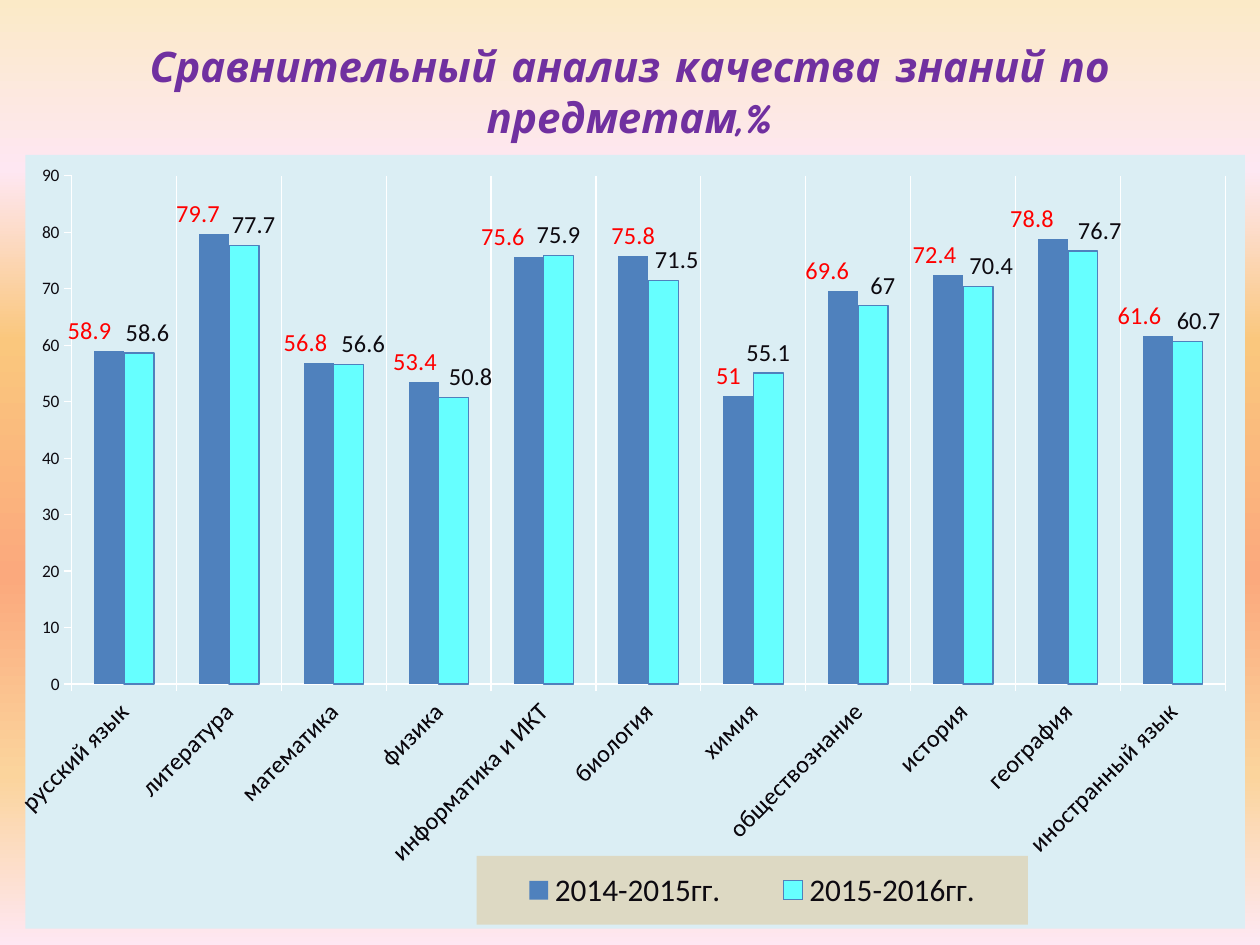
from lxml.etree import SubElement
from pptx import Presentation
from pptx.chart.data import CategoryChartData
from pptx.dml.color import RGBColor
from pptx.enum.chart import (XL_CHART_TYPE, XL_LABEL_POSITION,
                             XL_LEGEND_POSITION, XL_TICK_MARK)
from pptx.enum.text import MSO_ANCHOR, PP_ALIGN
from pptx.oxml import parse_xml
from pptx.oxml.ns import nsdecls, qn
from pptx.util import Inches, Pt

INK, RED, WHITE, BLUE = "0D0A10", "FF0000", "FFFFFF", "4F81BD"
STOPS = [(0, "FBEAC7"), (18, "FEE7F2"), (36, "FAC77D"),
         (61, "FBA97D"), (82, "FBD49C"), (100, "FEE7F2")]
CATS = ["русский язык", "литература", "математика", "физика",
        "информатика и ИКТ", "биология", "химия", "обществознание",
        "история", "география", "иностранный язык"]
# name, fill, label colour, values, label shifts in percent of chart width
SERIES = [
    ("2014-2015гг.", BLUE, RED,
     [58.9, 79.7, 56.8, 53.4, 75.6, 75.8, 51, 69.6, 72.4, 78.8, 61.6],
     [-1.6, -1.3, -1.1, -0.7, -2.1, 0, -0.8, -1.3, -1.1, -1.7, -1.5]),
    ("2015-2016гг.", "66FFFF", INK,
     [58.6, 77.7, 56.6, 50.8, 75.9, 71.5, 55.1, 67, 70.4, 76.7, 60.7],
     [0.7, 0.8, 1.2, 1.4, 0, 1.1, 0, 0.8, 1.1, 1.4, 0.9]),
]


def rgb(code):
    return RGBColor.from_string(code)


def style(font, size, color, name="Calibri", bold=False, italic=False):
    font.size, font.name = Pt(size), name
    font.bold, font.italic = bold, italic
    font.color.rgb = rgb(color)


def put_text(slide, box, text, **form):
    shape = slide.shapes.add_textbox(*map(Inches, box))
    frame = shape.text_frame
    frame.word_wrap = True
    frame.vertical_anchor = MSO_ANCHOR.MIDDLE
    para = frame.paragraphs[0]
    para.alignment = PP_ALIGN.CENTER
    run = para.add_run()
    run.text = text
    style(run.font, **form)


def backdrop(slide):
    slide.background.fill.gradient()
    grad = slide.element.xpath(".//p:bgPr/a:gradFill")[0]
    for child in list(grad):
        grad.remove(child)
    stops = SubElement(grad, qn("a:gsLst"))
    for share, code in STOPS:
        stop = SubElement(stops, qn("a:gs"), pos=str(share * 1000))
        SubElement(stop, qn("a:srgbClr"), val=code)
    SubElement(grad, qn("a:lin"), ang="5400000", scaled="0")


def layout(parent, index, **parts):
    """Give a chart part a manual layout, as the child at index."""
    for old in parent.findall(qn("c:layout")):
        parent.remove(old)
    node = parse_xml(f"<c:layout {nsdecls('c')}><c:manualLayout/></c:layout>")
    for tag, value in parts.items():
        SubElement(node[0], qn("c:" + tag), val=str(value))
    parent.insert(index, node)


def solid(parent, after, code):
    """Add a plain fill to a chart part, behind the given child."""
    parent.find(qn(after)).addnext(parse_xml(
        f"<c:spPr {nsdecls('c', 'a')}><a:solidFill><a:srgbClr val='{code}'/>"
        "</a:solidFill><a:ln><a:noFill/></a:ln></c:spPr>"))


def bars(chart):
    plot = chart.plots[0]
    plot.gap_width, plot.overlap = 150, 0
    plot.vary_by_categories = False
    for series, (_, fill, ink, _, shifts) in zip(plot.series, SERIES):
        series.format.fill.solid()
        series.format.fill.fore_color.rgb = rgb(fill)
        if fill != BLUE:
            series.format.line.color.rgb = rgb(BLUE)
            series.format.line.width = Pt(0.75)
        labels = series.data_labels
        labels.show_value = True
        labels.position = XL_LABEL_POSITION.OUTSIDE_END
        style(labels.font, 14, ink)
        for i, shift in enumerate(shifts):
            if shift:
                label = series.points[i].data_label
                style(label.font, 14, ink)
                label.position = XL_LABEL_POSITION.OUTSIDE_END
                node = chart.element.xpath(
                    f".//c:ser[c:tx//c:v='{series.name}']"
                    f"/c:dLbls/c:dLbl[c:idx/@val='{i}']")[0]
                layout(node, 1, x=round(shift / 100, 3), y=0)


def axes(chart):
    cat, val = chart.category_axis, chart.value_axis
    for axis, size in ((cat, 14), (val, 10)):
        axis.major_tick_mark = XL_TICK_MARK.OUTSIDE
        axis.format.line.color.rgb = rgb(WHITE)
        style(axis.tick_labels.font, size, INK)
    cat.has_major_gridlines = True
    cat.major_gridlines.format.line.color.rgb = rgb(WHITE)
    val.has_major_gridlines = False
    val.minimum_scale, val.maximum_scale, val.major_unit = 0, 90, 10
    body = chart.element.xpath(".//c:catAx/c:txPr/a:bodyPr")[0]
    body.set("rot", "-2700000")
    body.set("vert", "horz")


def key(chart):
    """Place the legend at the foot of the chart."""
    chart.has_legend = True
    chart.legend.position = XL_LEGEND_POSITION.RIGHT
    chart.legend.include_in_layout = False
    style(chart.legend.font, 18, INK)
    node = chart.element.xpath(".//c:legend")[0]
    layout(node, 1, xMode="edge", yMode="edge", x=0.37, y=0.906, w=0.452, h=0.089)
    solid(node, "c:overlay", "DDD9C3")


def put_chart(slide, box):
    data = CategoryChartData()
    data.categories = CATS
    for name, _, _, values, _ in SERIES:
        data.add_series(name, values)
    chart = slide.shapes.add_chart(
        XL_CHART_TYPE.COLUMN_CLUSTERED, *map(Inches, box), data).chart
    chart.has_title = False
    style(chart.font, 10, WHITE)
    bars(chart)
    axes(chart)
    key(chart)
    solid(chart.element, "c:chart", "DBEEF4")
    layout(chart.element.xpath(".//c:plotArea")[0], 0, layoutTarget="inner",
           xMode="edge", yMode="edge", x=0.038, y=0.027, w=0.946, h=0.657)


def main():
    deck = Presentation()
    deck.slide_width, deck.slide_height = Inches(10), Inches(7.5)
    slide = deck.slides.add_slide(deck.slide_layouts[6])
    backdrop(slide)
    put_text(slide, (0.5, 0.3, 9, 0.85),
             "Сравнительный анализ качества знаний по предметам,%",
             size=24, color="7030A0", name="Comic Neue", bold=True, italic=True)
    put_chart(slide, (0.12, 1.23, 9.76, 6.14))
    deck.save("out.pptx")


if __name__ == "__main__":
    main()
